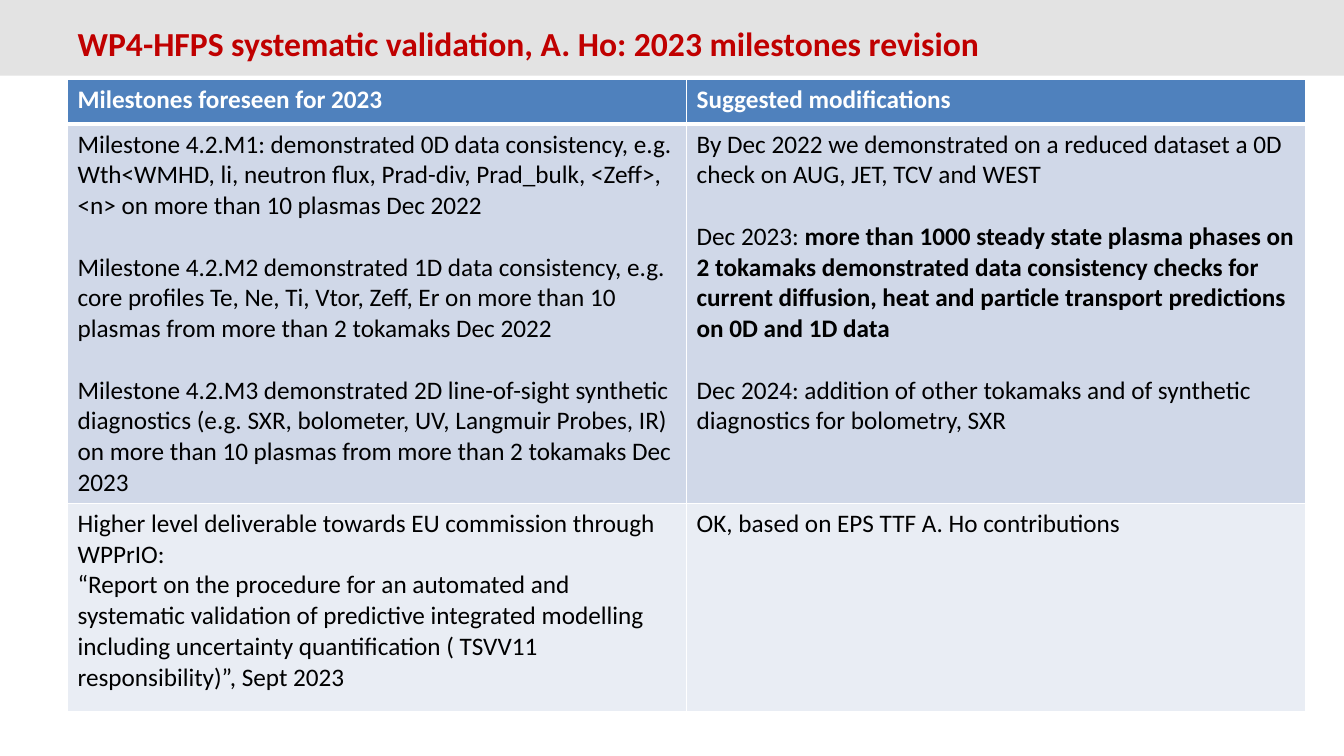
from dataclasses import dataclass

from lxml.etree import SubElement
from pptx import Presentation
from pptx.dml.color import RGBColor
from pptx.enum.shapes import MSO_SHAPE
from pptx.enum.text import MSO_ANCHOR, MSO_AUTO_SIZE, PP_ALIGN
from pptx.oxml.ns import qn
from pptx.util import Inches, Pt

FONT = "Calibri"
COLORS = {
    "bar": "E3E3E3",
    "title": "C00000",
    "head": "4F81BD",
    "odd": "D0D8E8",
    "even": "E9EDF4",
    "white": "FFFFFF",
    "black": "000000",
}


@dataclass
class Para:
    text: str
    strong: str = ""
    gap: float = 0


@dataclass
class Row:
    height: float
    fill: str
    ink: str
    bold: bool
    top: float
    base: float
    cells: list[list[Para]]


ROWS = [
    Row(0.44, "head", "white", True, 1, 3, [
        [Para("Milestones foreseen for 2023")],
        [Para("Suggested modifications")],
    ]),
    Row(3.76, "odd", "black", False, 3, 1, [
        [
            Para("Milestone 4.2.M1: demonstrated 0D data consistency, e.g. Wth<WMHD, li, "
                 "neutron flux, Prad-div, Prad_bulk, <Zeff>, <n> on more than 10 plasmas Dec 2022"),
            Para("Milestone 4.2.M2 demonstrated 1D data consistency, e.g. core profiles Te, Ne, "
                 "Ti, Vtor, Zeff, Er on more than 10 plasmas from more than 2 tokamaks Dec 2022",
                 gap=22),
            Para("Milestone 4.2.M3 demonstrated 2D line-of-sight synthetic diagnostics (e.g. SXR, "
                 "bolometer, UV, Langmuir Probes, IR) on more than 10 plasmas from more than "
                 "2 tokamaks Dec 2023", gap=22),
        ],
        [
            Para("By Dec 2022 we demonstrated on a reduced dataset a 0D check on AUG, JET, "
                 "TCV and WEST"),
            Para("Dec 2023: ", "more than 1000 steady state plasma phases on 2 tokamaks "
                 "demonstrated data consistency checks for current diffusion, heat and particle "
                 "transport predictions on 0D and 1D data", 22),
            Para("Dec 2024: addition of other tokamaks and of synthetic diagnostics for "
                 "bolometry, SXR", gap=22),
        ],
    ]),
    Row(2.07, "even", "black", False, 1, 1, [
        [
            Para("Higher level deliverable towards EU commission through WPPrIO:"),
            Para("“Report on the procedure for an automated and systematic validation of "
                 "predictive integrated modelling including uncertainty quantification "
                 "( TSVV11 responsibility)”, Sept 2023"),
        ],
        [Para("OK, based on EPS TTF A. Ho contributions")],
    ]),
]


def tint(name: str) -> RGBColor:
    return RGBColor.from_string(COLORS[name])


def style(font, size: float, ink: str, bold: bool) -> None:
    font.name = FONT
    font.size = Pt(size)
    font.bold = bold
    font.color.rgb = tint(ink)


def add_bar(slide) -> None:
    bar = slide.shapes.add_shape(MSO_SHAPE.RECTANGLE, 0, 0, Inches(13.33), Inches(0.75))
    bar.shadow.inherit = False
    bar.fill.solid()
    bar.fill.fore_color.rgb = tint("bar")
    bar.line.fill.background()
    slide.shapes.title.element.addprevious(bar.element)


def set_title(slide) -> None:
    title = slide.shapes.title
    title.left, title.top = Inches(0.67), Inches(0.08)
    title.width, title.height = Inches(11), Inches(0.5)
    frame = title.text_frame
    frame.text = "WP4-HFPS systematic validation, A. Ho: 2023 milestones revision"
    frame.auto_size = MSO_AUTO_SIZE.NONE
    frame.vertical_anchor = MSO_ANCHOR.MIDDLE
    line = frame.paragraphs[0]
    line.alignment = PP_ALIGN.LEFT
    line.line_spacing = Pt(42.7)
    style(line.runs[0].font, 24, "title", True)


def add_edges(cell, top: float, base: float) -> None:
    props = cell._tc.get_or_add_tcPr()
    for side, width in (("L", 1), ("R", 1), ("T", top), ("B", base)):
        edge = SubElement(props, qn(f"a:ln{side}"), w=str(Pt(width)))
        fill = SubElement(edge, qn("a:solidFill"))
        SubElement(fill, qn("a:srgbClr"), val=COLORS["white"])


def fill_cell(cell, row: Row, paras: list[Para]) -> None:
    add_edges(cell, row.top, row.base)
    cell.fill.solid()
    cell.fill.fore_color.rgb = tint(row.fill)
    frame = cell.text_frame
    for spot, para in enumerate(paras):
        line = frame.add_paragraph() if spot else frame.paragraphs[0]
        line.text = para.text
        style(line.runs[0].font, 18, row.ink, row.bold)
        if para.gap:
            line.space_before = Pt(para.gap)
        if para.strong:
            run = line.add_run()
            run.text = para.strong
            style(run.font, 18, row.ink, True)


def add_grid(slide) -> None:
    height = sum(row.height for row in ROWS)
    grid = slide.shapes.add_table(
        len(ROWS), 2, Inches(0.67), Inches(0.79), Inches(12.28), Inches(height)
    ).table
    for y, row in enumerate(ROWS):
        grid.rows[y].height = Inches(row.height)
        for x, paras in enumerate(row.cells):
            fill_cell(grid.cell(y, x), row, paras)


def main() -> None:
    deck = Presentation()
    deck.slide_width, deck.slide_height = Inches(13.33), Inches(7.5)
    slide = deck.slides.add_slide(deck.slide_layouts[5])
    set_title(slide)
    add_bar(slide)
    add_grid(slide)
    deck.save("out.pptx")


if __name__ == "__main__":
    main()
